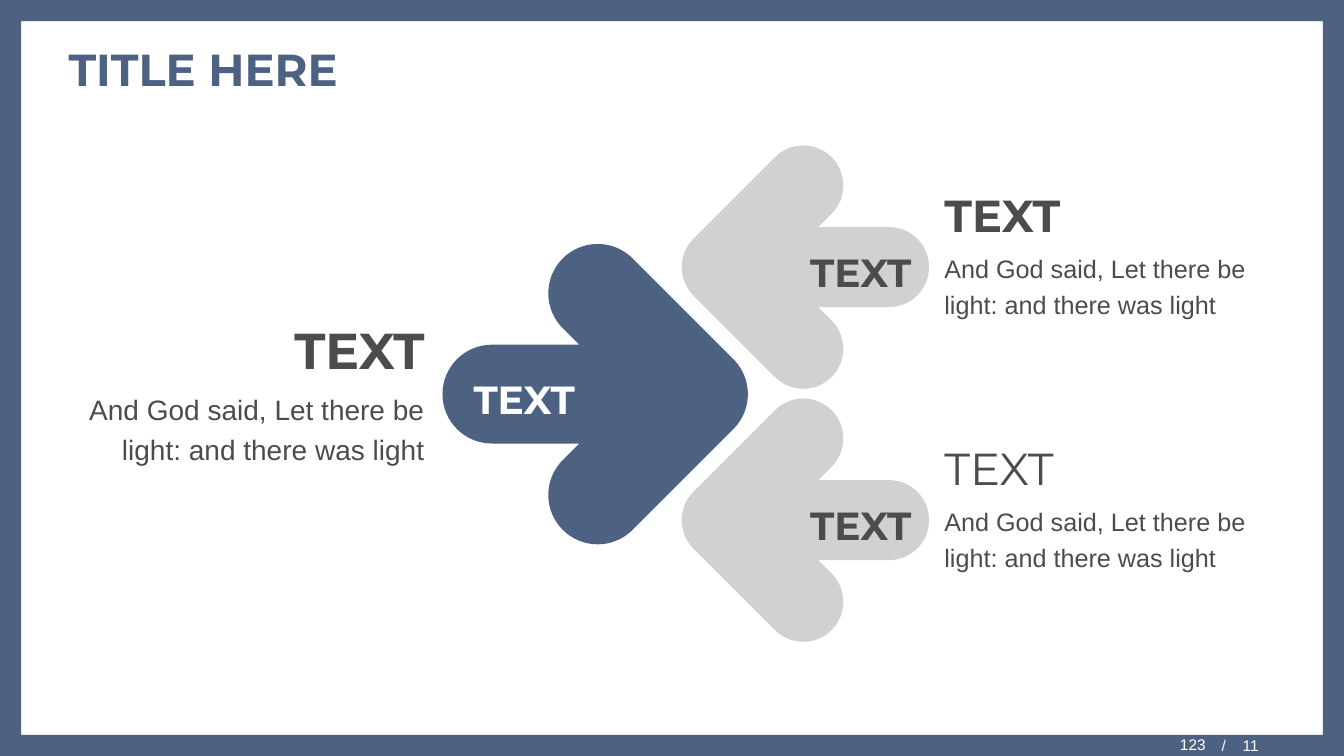
from math import cos, radians, sin, tan

from lxml import etree
from pptx import Presentation
from pptx.dml.color import RGBColor
from pptx.enum.shapes import MSO_SHAPE
from pptx.enum.text import MSO_ANCHOR, MSO_AUTO_SIZE, PP_ALIGN
from pptx.oxml.ns import qn
from pptx.util import Inches, Pt

LEFT, RIGHT, CENTER = PP_ALIGN.LEFT, PP_ALIGN.RIGHT, PP_ALIGN.CENTER
TOP, MIDDLE = MSO_ANCHOR.TOP, MSO_ANCHOR.MIDDLE
GROW, FIXED = MSO_AUTO_SIZE.SHAPE_TO_FIT_TEXT, MSO_AUTO_SIZE.NONE
FRAME = MSO_SHAPE.FRAME

COLORS = {"blue": "4D6283", "gray": "D1D1D1", "dark": "4C4C4C", "white": "FFFFFF"}
HEAD, BODY = "Montserrat", "Arial"
VERSE = "And God said, Let there be light: and there was light"


def paint(shape, color):
    shape.shadow.inherit = False
    shape.fill.solid()
    shape.fill.fore_color.rgb = RGBColor.from_string(COLORS[color])
    shape.line.fill.background()


def write(shape, lines, color, align=LEFT, anchor=TOP, size=FIXED, wrap=True):
    """Fill a shape with lines of (text, font, points, bold)."""
    frame = shape.text_frame
    frame.word_wrap, frame.auto_size = wrap, size
    frame.vertical_anchor = anchor
    frame.text = "\n".join(line[0] for line in lines)
    for para, (_, face, points, bold) in zip(frame.paragraphs, lines):
        para.alignment = align
        if size == GROW:
            para.line_spacing = 1.2
            para.space_before = para.space_after = Pt(2)
        font = para.runs[0].font
        font.name, font.size, font.bold = face, Pt(points), bold
        font.color.rgb = RGBColor.from_string(COLORS[color])


deck = Presentation()
deck.slide_width, deck.slide_height = Inches(40 / 3), Inches(7.5)
slide = deck.slides.add_slide(deck.slide_layouts[5])
shapes = slide.shapes

# Border and title
title = shapes.title
border = shapes.add_shape(FRAME, 0, 0, deck.slide_width, deck.slide_height)
border.adjustments[0] = 0.028
paint(border, "blue")
title._element.addprevious(border._element)
title.left, title.top = Inches(0.58), Inches(0.29)
title.width, title.height = Inches(12.18), Inches(0.79)
write(title, [("TITLE HERE", HEAD, 32, True)], "blue", anchor=MIDDLE)

# Arrow outline around its tip centre: arcs of one radius, joined by lines.
# Each step is one line (one point) or one curve (three points).
R = 0.49
NOTCH = 2.414 * R  # where a 45-degree barb meets the shaft
ARCS = [
    (0, 0, [-45, 0, 45]),
    (-1, 1, [45, 90, 180, 225]),
    (-NOTCH, R, []),
    (-2.05, 0, [90, 180, 270]),
    (-NOTCH, -R, []),
    (-1, -1, [135, 180, 270, 315]),
]
steps = []
for x, y, stops in ARCS:
    if not stops:
        steps.append([(x, y)])
        continue
    rim = [(R * cos(radians(deg)), R * sin(radians(deg))) for deg in stops]
    steps.append([(x + rim[0][0], y + rim[0][1])])
    for i, ((ax, ay), (bx, by)) in enumerate(zip(rim, rim[1:])):
        pull = 4 / 3 * tan(radians(stops[i + 1] - stops[i]) / 4)
        steps.append([(x + ax - pull * ay, y + ay + pull * ax),
                      (x + bx + pull * by, y + by - pull * bx),
                      (x + bx, y + by)])

# Tip centre, scale (negative points left), fill, label colour, label box,
# text box, alignment, heading points, heading bold, body points
ARROWS = [
    (6.93, 3.91, 1, "blue", "white", (4.52, 3.58),
     (0.58, 3, 3.73, 1.69), RIGHT, 36, True, 20),
    (7.16, 2.65, -0.81, "gray", "dark", (7.86, 2.32),
     (9.27, 1.71, 3.49, 1.53), LEFT, 32, True, 18),
    (7.16, 5.16, -0.81, "gray", "dark", (7.86, 4.83),
     (9.27, 4.22, 3.49, 1.53), LEFT, 32, False, 18),
]
for (tip_x, tip_y, scale, fill, ink, spot, area, align, big, bold,
     small) in ARROWS:
    points = [(Inches(tip_x + scale * x), Inches(tip_y + scale * y))
              for step in steps for x, y in step]
    pen = shapes.build_freeform(*points[0])
    pen.add_line_segments(points[1:])
    arrow = pen.convert_to_shape()
    paint(arrow, fill)
    # Turn each run of three curve points into one Bezier segment
    lines = arrow._element.iter(qn("a:lnTo"))
    lines = iter(list(lines))
    for step in steps[1:]:
        group = [next(lines) for _ in step]
        if len(group) == 3:
            curve = etree.Element(qn("a:cubicBezTo"))
            group[0].addprevious(curve)
            for line in group:
                curve.append(line[0])
                line.getparent().remove(line)

    note = shapes.add_textbox(*map(Inches, area))
    write(note, [("TEXT", HEAD, big, bold), (VERSE, BODY, small, False)],
          "dark", align, size=GROW)
    label = shapes.add_textbox(*map(Inches, spot + (1.36, 0.67)))
    write(label, [("TEXT", HEAD, 28, True)], ink, CENTER, MIDDLE, GROW, False)

# Page number, with a tab stop between the slash and the total
total = shapes.add_textbox(*map(Inches, (12.02, 7.3, 1.31, 0.18)))
write(total, [("/\t11", BODY, 11, False)], "white", anchor=MIDDLE)
props = total.text_frame.paragraphs[0]._p.get_or_add_pPr()
tabs = etree.SubElement(props, qn("a:tabLst"))
etree.SubElement(tabs, qn("a:tab"), pos=str(Inches(0.21)), algn="l")

page = shapes.add_textbox(*map(Inches, (9.47, 7.32, 2.59, 0.18)))
write(page, [("123", BODY, 11, False)], "white", RIGHT, MIDDLE)
page.text_frame.margin_top = 0

deck.save("out.pptx")
